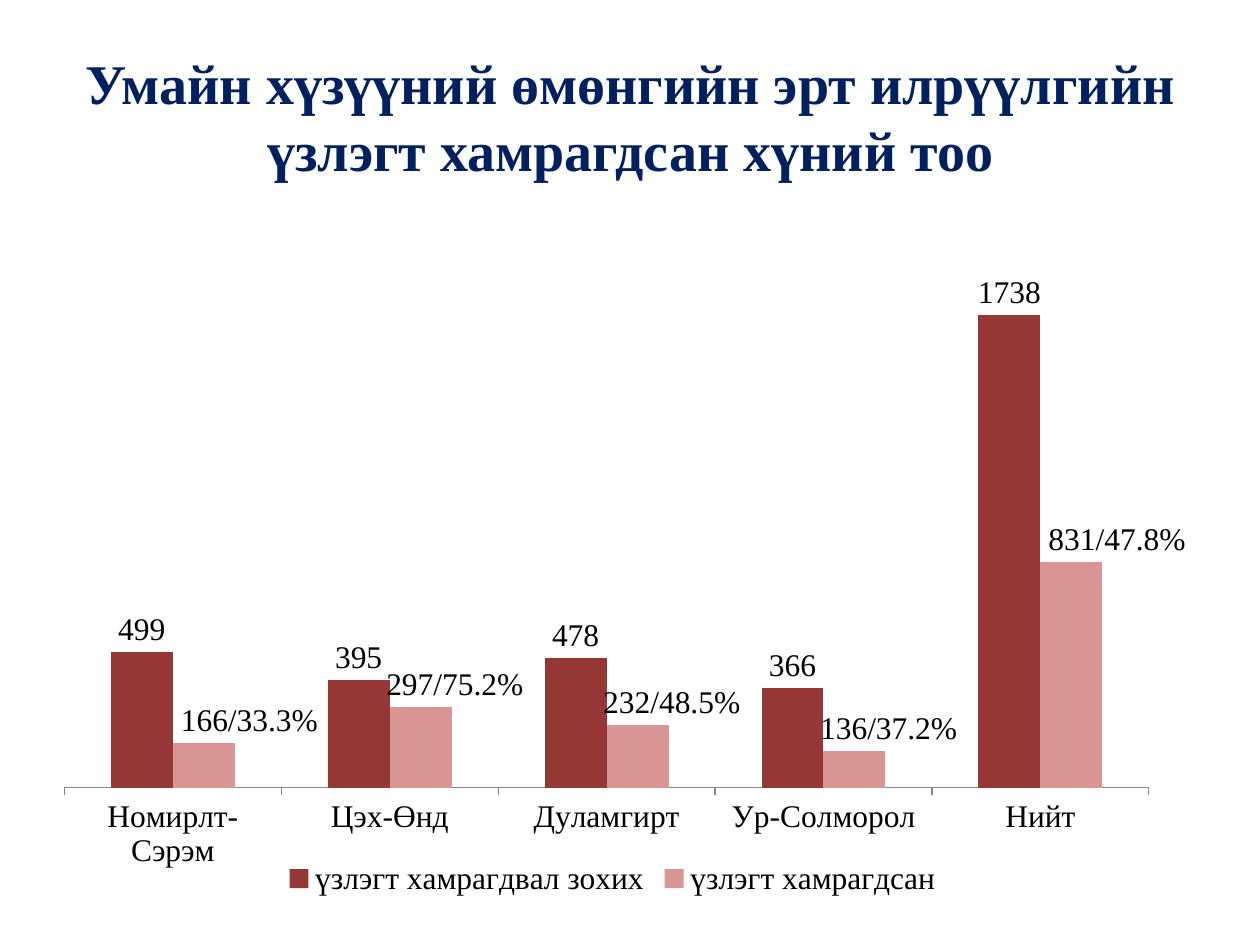
from lxml import etree
from pptx import Presentation
from pptx.chart.data import CategoryChartData
from pptx.dml.color import RGBColor
from pptx.enum import chart as ch, text
from pptx.oxml import ns
from pptx.util import Inches, Pt

NAVY = RGBColor(0x00, 0x20, 0x60)
BLACK = RGBColor(0x00, 0x00, 0x00)
GREY = RGBColor(0x86, 0x86, 0x86)
RED = RGBColor(0x95, 0x37, 0x35)
PINK = RGBColor(0xD9, 0x96, 0x94)
FACE = "Times New Roman"

TITLE = "Умайн хүзүүний өмөнгийн эрт илрүүлгийн үзлэгт хамрагдсан хүний тоо"
SITES = ["Номирлт-Сэрэм", "Цэх-Өнд", "Дуламгирт", "Ур-Солморол", "Нийт"]
DUE = [499, 395, 478, 366, 1738]
SEEN = [166, 297, 232, 136, 831]
RATES = ["33.3%", "75.2%", "48.5%", "37.2%", "47.8%"]
SHIFTS = [0.04, 0.03, 0.03, 0.03, 0.04]


def style(font, size, color, bold=False):
    """Set the face, size, colour and weight of a font."""
    font.name, font.size, font.bold = FACE, Pt(size), bold
    font.color.rgb = color


def place(node, index, **spots):
    """Insert a manual chart layout into a node."""
    layout = etree.Element(ns.qn("c:layout"))
    manual = etree.SubElement(layout, ns.qn("c:manualLayout"))
    for name, value in spots.items():
        etree.SubElement(manual, ns.qn("c:" + name)).set("val", str(value))
    for old in node.findall(ns.qn("c:layout")):
        node.remove(old)
    node.insert(index, layout)


def add_title(slide, left, top, width, height):
    """Write the centred heading in its box."""
    frame = slide.shapes.add_textbox(left, top, width, height).text_frame
    frame.word_wrap = True
    frame.vertical_anchor = text.MSO_ANCHOR.MIDDLE
    para = frame.paragraphs[0]
    para.alignment = text.PP_ALIGN.CENTER
    run = para.add_run()
    run.text = TITLE
    style(run.font, 32, NAVY, True)


def add_rates(series):
    """Label each bar with its count and share, moved to the right."""
    for point, (seen, rate) in enumerate(zip(SEEN, RATES)):
        label = series.points[point].data_label
        run = label.text_frame.paragraphs[0].add_run()
        run.text = f"{seen}/{rate}"
        style(run.font, 18, BLACK)
        label.position = ch.XL_LABEL_POSITION.OUTSIDE_END
    for node in series.data_labels._element.findall(ns.qn("c:dLbl")):
        shift = SHIFTS[int(node.find(ns.qn("c:idx")).get("val"))]
        place(node, 1, x=shift, y=0)


def add_bars(slide, left, top, width, height):
    """Draw the clustered columns in their box."""
    data = CategoryChartData()
    data.categories = SITES
    data.add_series("үзлэгт хамрагдвал зохих", DUE)
    data.add_series("үзлэгт хамрагдсан", SEEN)
    kind = ch.XL_CHART_TYPE.COLUMN_CLUSTERED
    chart = slide.shapes.add_chart(kind, left, top, width, height, data).chart
    style(chart.font, 18, BLACK)
    chart.has_title = False
    chart.has_legend = True
    chart.legend.position = ch.XL_LEGEND_POSITION.BOTTOM
    chart.legend.include_in_layout = False
    axis = chart.value_axis
    axis.visible = axis.has_major_gridlines = False
    axis.minimum_scale, axis.maximum_scale = 0, 2000
    axis = chart.category_axis
    axis.major_tick_mark = ch.XL_TICK_MARK.OUTSIDE
    axis.format.line.color.rgb = GREY
    plot = chart.plots[0]
    plot.gap_width, plot.overlap = 150, 0
    plot.vary_by_categories = False
    for series, color in zip(plot.series, (RED, PINK)):
        series.format.fill.solid()
        series.format.fill.fore_color.rgb = color
        labels = series.data_labels
        labels.show_value = True
        labels.position = ch.XL_LABEL_POSITION.OUTSIDE_END
        style(labels.font, 18, BLACK)
    add_rates(plot.series[1])
    area = chart._chartSpace.find(".//" + ns.qn("c:plotArea"))
    place(area, 0, layoutTarget="inner", xMode="edge", yMode="edge",
          x=0.02, y=0.02, w=0.95, h=0.81)


def main():
    """Build and save the slide."""
    deck = Presentation()
    deck.slide_width, deck.slide_height = Inches(10), Inches(7.5)
    slide = deck.slides.add_slide(deck.slide_layouts[6])
    add_title(slide, Inches(0.17), Inches(0.25), Inches(9.67), Inches(1.33))
    add_bars(slide, Inches(0.33), Inches(1.83), Inches(9.08), Inches(5.33))
    deck.save("out.pptx")


if __name__ == "__main__":
    main()
